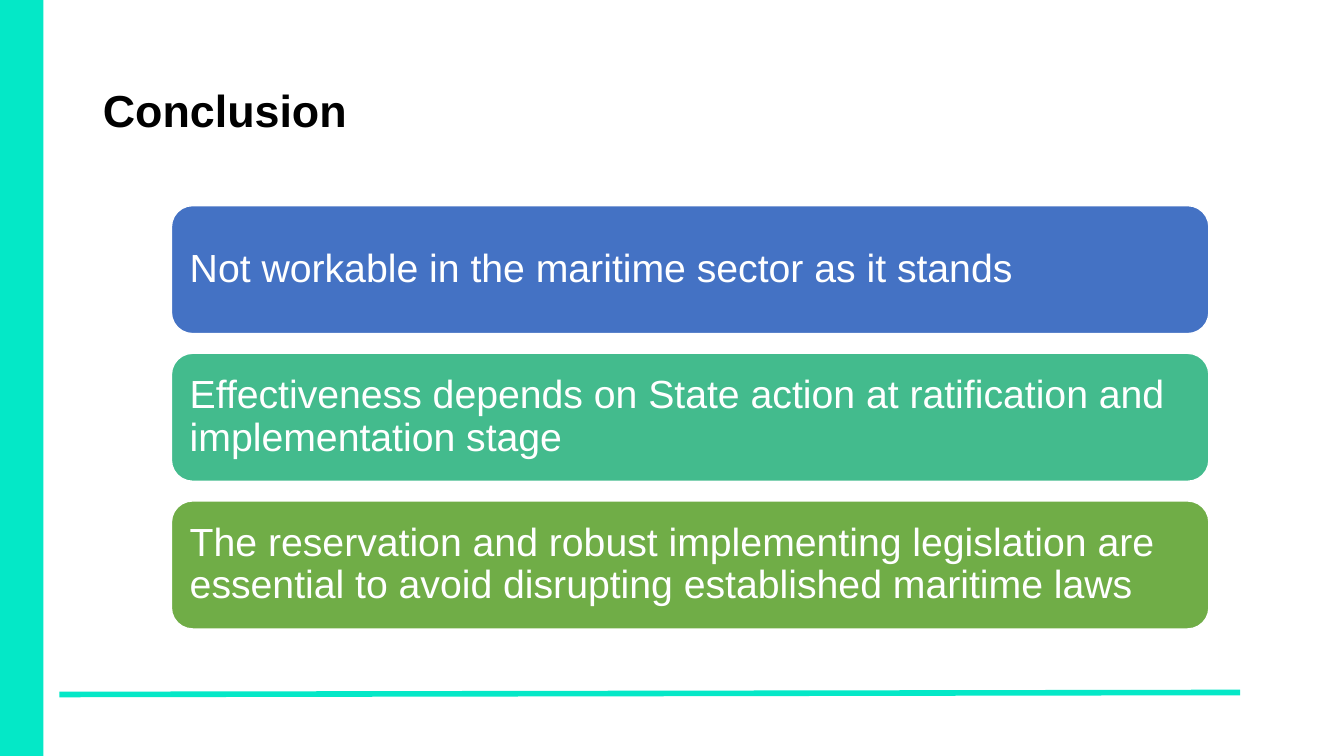
from dataclasses import dataclass

from pptx import Presentation
from pptx.dml.color import RGBColor
from pptx.enum.shapes import MSO_CONNECTOR as Link, MSO_SHAPE as Shape
from pptx.enum.text import MSO_ANCHOR as Anchor, PP_ALIGN as Align
from pptx.util import Inches, Pt
from lxml.etree import SubElement
from pptx.oxml.ns import qn

TITLE = "Conclusion"
POINTS = [
    ("Not workable in the maritime sector as it stands", "4472C4"),
    ("Effectiveness depends on State action at ratification and "
     "implementation stage", "43BB8D"),
    ("The reservation and robust implementing legislation are essential "
     "to avoid disrupting established maritime laws", "70AD47"),
]


@dataclass(frozen=True)
class Theme:
    font: str = "Arial"
    accent: str = "04E8C7"
    dark: str = "000000"
    light: str = "FFFFFF"
    title: int = 32
    body: int = 28


theme = Theme()
WIDE, HIGH = 13.33, 7.5
LEFT, TOP, WIDTH, HEIGHT, STEP = 1.7, 2.04, 10.29, 1.27, 1.465


def rgb(code):
    return RGBColor.from_string(code)


def write(shape, text, size, color, bold=False, inset=0.1):
    frame = shape.text_frame
    frame.word_wrap = True
    frame.vertical_anchor = Anchor.MIDDLE
    frame.margin_left = frame.margin_right = Inches(inset)
    frame.margin_top = frame.margin_bottom = Inches(inset)
    para = frame.paragraphs[0]
    para.text = text
    para.alignment = Align.LEFT
    para.line_spacing = 0.9
    font = para.runs[0].font
    font.name, font.size, font.bold = theme.font, Pt(size), bold
    font.color.rgb = rgb(color)


def block(slide, kind, box, fill, edge=None):
    shape = slide.shapes.add_shape(kind, *map(Inches, box))
    shape.shadow.inherit = False
    shape.fill.solid()
    shape.fill.fore_color.rgb = rgb(fill)
    if edge:
        shape.line.color.rgb = rgb(edge)
        shape.line.width = Pt(1)
    else:
        shape.line.fill.background()
    return shape


def rule(slide, start, end):
    line = slide.shapes.add_connector(Link.STRAIGHT, *map(Inches, start + end))
    line.line.color.rgb = rgb(theme.accent)
    line.line.width = Pt(4)
    SubElement(line._element.spPr, qn("a:effectLst"))


def main():
    deck = Presentation()
    deck.slide_width, deck.slide_height = Inches(WIDE), Inches(HIGH)
    slide = deck.slides.add_slide(deck.slide_layouts[5])

    rule(slide, (12.3, 6.87), (0.59, 6.89))
    block(slide, Shape.RECTANGLE, (0, 0, 0.43, HIGH), theme.accent)

    title = slide.shapes.title
    title.left, title.top = Inches(0.92), Inches(0.4)
    title.width, title.height = Inches(11.5), Inches(1.45)
    write(title, TITLE, theme.title, theme.dark, bold=True)

    for row, (text, fill) in enumerate(POINTS):
        box = (LEFT, TOP + row * STEP, WIDTH, HEIGHT)
        card = block(slide, Shape.ROUNDED_RECTANGLE, box, fill, theme.light)
        write(card, text, theme.body, theme.light, inset=0.12)

    deck.save("out.pptx")


if __name__ == "__main__":
    main()
